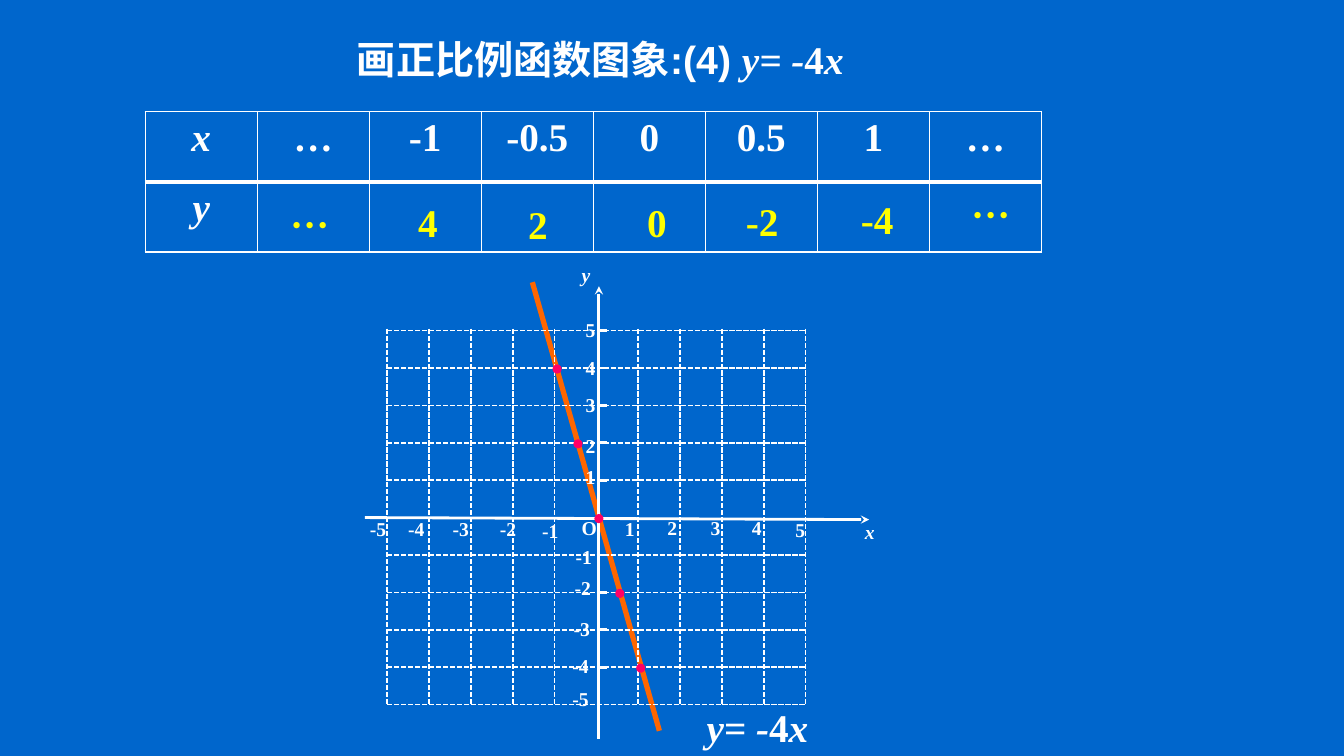
from lxml.etree import SubElement
from pptx import Presentation
from pptx.dml.color import RGBColor
from pptx.enum.dml import MSO_LINE
from pptx.enum.shapes import MSO_CONNECTOR, MSO_SHAPE
from pptx.enum.text import MSO_ANCHOR, PP_ALIGN
from pptx.oxml.ns import qn
from pptx.util import Inches, Pt

WHITE, YELLOW, ORANGE, PINK, BLUE = "FFFFFF", "FFFF00", "FF6600", "FF0066", "0066CC"
SERIF, SANS, CJK = "Times New Roman", "Arial", "Noto Sans CJK SC"
EQUATION = [("y= -", True), ("4", False), ("x", True)]
XS = [-1, -0.5, 0, 0.5, 1]


def color(hex_text):
    return RGBColor.from_string(hex_text)


def add_run(paragraph, text, size, hex_text=WHITE, font=SERIF, italic=False):
    run = paragraph.add_run()
    run.text = text
    run.font.size = Pt(size)
    run.font.name = font
    run.font.bold = True
    run.font.italic = italic
    run.font.color.rgb = color(hex_text)
    SubElement(run.font._element, qn("a:ea")).set("typeface", CJK)


def add_equation(paragraph):
    for part, italic in EQUATION:
        add_run(paragraph, part, 28, italic=italic)


def add_label(slide, left, top, width, height):
    label = slide.shapes.add_textbox(Inches(left), Inches(top), Inches(width), Inches(height))
    label.text_frame.word_wrap = True
    return label.text_frame.paragraphs[0]


def add_line(slide, start, end, width, hex_text=WHITE, dashed=False, arrow=False):
    points = [Inches(value) for value in (*start, *end)]
    line = slide.shapes.add_connector(MSO_CONNECTOR.STRAIGHT, *points)
    line.line.color.rgb = color(hex_text)
    line.line.width = Pt(width)
    if dashed:
        line.line.dash_style = MSO_LINE.SQUARE_DOT
    if arrow:
        SubElement(line.line._get_or_add_ln(), qn("a:tailEnd")).set("type", "stealth")
    SubElement(line._element.spPr, qn("a:effectLst"))


def add_title(slide, left, top, width, height):
    title = slide.shapes.title
    title.left, title.top = Inches(left), Inches(top)
    title.width, title.height = Inches(width), Inches(height)
    title.text_frame.vertical_anchor = MSO_ANCHOR.TOP
    heading = title.text_frame.paragraphs[0]
    heading.alignment = PP_ALIGN.LEFT
    add_run(heading, "画正比例函数图象:(4) ", 28, font=SANS)
    add_equation(heading)


def set_borders(cell, widths):
    properties = cell._tc.get_or_add_tcPr()
    for side, width in widths.items():
        border = SubElement(properties, qn(f"a:{side}"), w=str(Pt(width)))
        fill = SubElement(border, qn("a:solidFill"))
        SubElement(fill, qn("a:srgbClr"), val=WHITE)


def add_value_table(slide, left, top, width, height):
    header = ["x", "…", *(f"{x}" for x in XS), "…"]
    frame = slide.shapes.add_table(
        2, len(header), Inches(left), Inches(top), Inches(width), Inches(height))
    table = frame.table
    table.first_row = table.horz_banding = False
    for row, texts in enumerate([header, ["y"] + [""] * 7]):
        for column, text in enumerate(texts):
            cell = table.cell(row, column)
            set_borders(cell, {"lnL": 1, "lnR": 1, "lnT": 3 if row else 1, "lnB": 1 if row else 3})
            cell.fill.background()
            if text:
                paragraph = cell.text_frame.paragraphs[0]
                paragraph.alignment = PP_ALIGN.CENTER
                add_run(paragraph, text, 28, italic=column == 0)

    results = ["…", *(f"{-4 * x:.0f}" if x else "0" for x in XS), "…"]
    places = [(1.34, 0.84), (2.61, 0.81), (3.7, 0.83), (4.88, 0.81),
              (5.86, 0.8), (7, 0.78), (8.1, 0.74)]
    for result, (across, down) in zip(results, places):
        paragraph = add_label(slide, left + across, top + down, 0.8, 0.57)
        add_run(paragraph, result, 28, YELLOW, CJK if result == "…" else SERIF)


def add_graph(slide, left, top, width, height):
    right, bottom = left + width, top + height
    step_x, step_y = width / 10, height / 10
    origin_x, origin_y = left + 2.1, top + height / 2

    add_line(slide, (origin_x - 0.66, top - 0.48), (origin_x + 0.6, bottom + 0.26), 3.75, ORANGE)
    add_line(slide, (left - 0.22, origin_y), (right + 0.63, origin_y + 0.02), 2, arrow=True)
    add_line(slide, (origin_x, bottom + 0.34), (origin_x, top - 0.44), 2, arrow=True)

    for index in range(11):
        if index == 5:
            continue
        x, y = left + index * step_x, top + index * step_y
        add_line(slide, (x, top - 0.02), (x, bottom), 1.25, dashed=True)
        add_line(slide, (left, y), (right, y), 1.25, dashed=True)
        if index < 10:
            add_line(slide, (origin_x, y), (origin_x + 0.08, y), 2)

    numbers = [*range(-5, 0), *range(1, 6)]
    x_places = [(-2.37, -0.06), (-1.99, -0.06), (-1.55, -0.06), (-1.08, -0.06), (-0.66, -0.04),
                (0.16, -0.06), (0.58, -0.07), (1.01, -0.07), (1.42, -0.07), (1.85, -0.05)]
    y_places = [(-0.36, 1.63), (-0.36, 1.3), (-0.35, 0.94), (-0.34, 0.53), (-0.33, 0.22),
                (-0.23, -0.57), (-0.23, -0.88), (-0.23, -1.29), (-0.23, -1.65), (-0.23, -2.03)]
    for number, (across, down) in zip(numbers * 2, x_places + y_places):
        paragraph = add_label(slide, origin_x + across, origin_y + down, 0.5, 0.36)
        add_run(paragraph, str(number), 14)
    for name, across, down in [("y", -0.27, -2.58), ("x", 2.54, -0.03), ("O", -0.27, -0.07)]:
        paragraph = add_label(slide, origin_x + across, origin_y + down, 0.5, 0.31)
        add_run(paragraph, name, 14, italic=name != "O")

    dot_size = 0.08
    for x in XS:
        dot = slide.shapes.add_shape(
            MSO_SHAPE.FLOWCHART_CONNECTOR,
            Inches(origin_x + x * step_x - dot_size / 2),
            Inches(origin_y + 4 * x * step_y + 0.01 - dot_size / 2),
            Inches(dot_size), Inches(dot_size))
        dot.shadow.inherit = False
        dot.fill.solid()
        dot.fill.fore_color.rgb = color(PINK)
        dot.line.color.rgb = color(PINK)
        dot.line.width = Pt(0.75)

    add_equation(add_label(slide, right - 1.08, bottom - 0.06, 1.5, 0.57))


def main():
    deck = Presentation()
    deck.slide_width, deck.slide_height = Inches(13.33), Inches(7.5)
    slide = deck.slides.add_slide(deck.slide_layouts[5])
    slide.background.fill.solid()
    slide.background.fill.fore_color.rgb = color(BLUE)
    add_title(slide, 3.44, 0.3, 9.5, 1.25)
    add_value_table(slide, 1.44, 1.11, 8.89, 1.39)
    add_graph(slide, 3.84, 3.28, 4.15, 3.71)
    deck.save("out.pptx")


if __name__ == "__main__":
    main()
